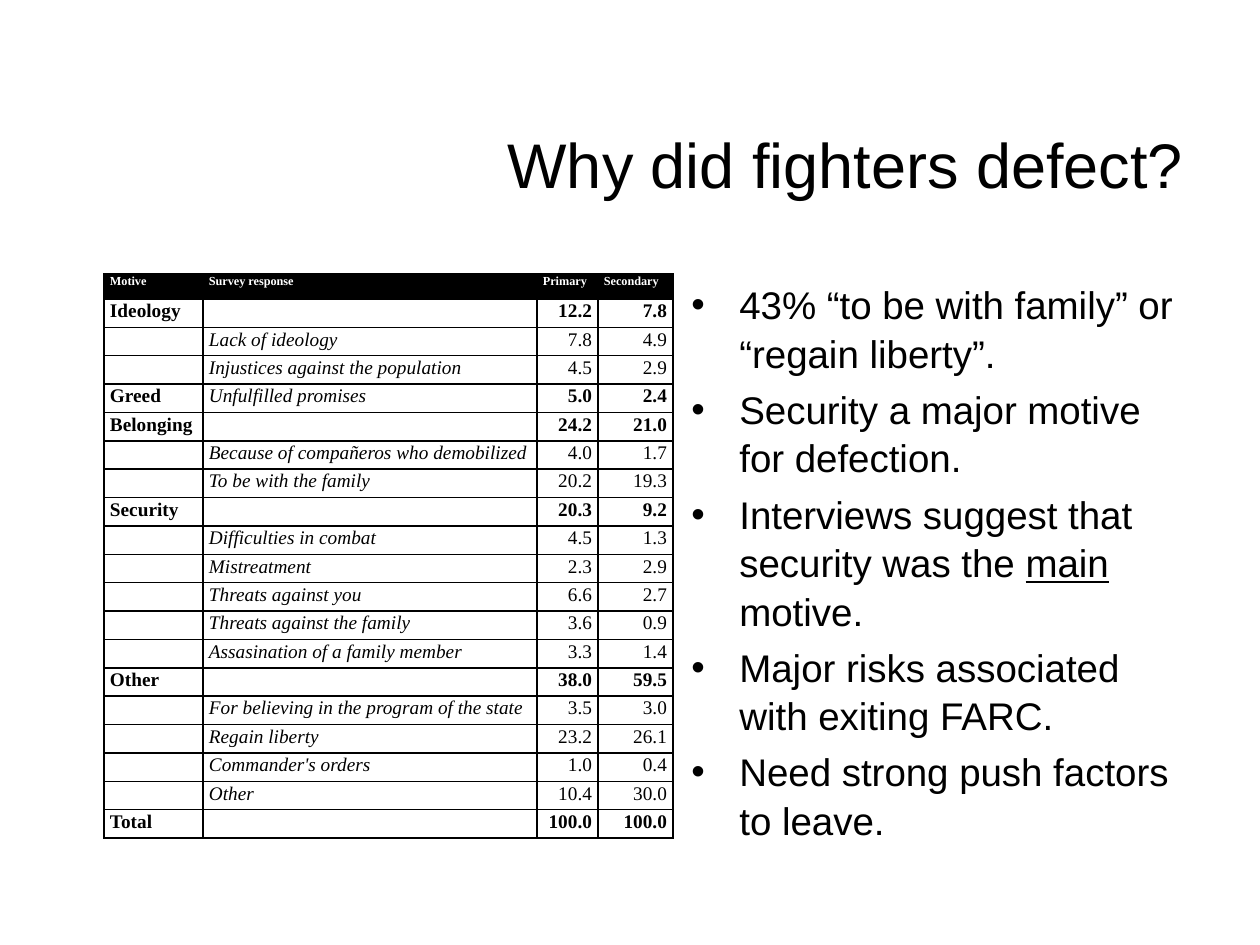
import lxml.etree
import pptx
import pptx.dml.color
import pptx.enum.text
import pptx.oxml.ns
import pptx.util

PIXELS_PER_INCH = 126
BLACK, WHITE = "000000", "FFFFFF"
ALIGN = pptx.enum.text.PP_ALIGN
ANCHOR = pptx.enum.text.MSO_ANCHOR

HEADINGS = ("Motive", "Survey response", "Primary", "Secondary")
MOTIVES = [
    ("Ideology", "", "12.2", "7.8"),
    ("", "Lack of ideology", "7.8", "4.9"),
    ("", "Injustices against the population", "4.5", "2.9"),
    ("Greed", "Unfulfilled promises", "5.0", "2.4"),
    ("Belonging", "", "24.2", "21.0"),
    ("", "Because of compañeros who demobilized", "4.0", "1.7"),
    ("", "To be with the family", "20.2", "19.3"),
    ("Security", "", "20.3", "9.2"),
    ("", "Difficulties in combat", "4.5", "1.3"),
    ("", "Mistreatment", "2.3", "2.9"),
    ("", "Threats against you", "6.6", "2.7"),
    ("", "Threats against the family", "3.6", "0.9"),
    ("", "Assasination of a family member", "3.3", "1.4"),
    ("Other", "", "38.0", "59.5"),
    ("", "For believing in the program of the state", "3.5", "3.0"),
    ("", "Regain liberty", "23.2", "26.1"),
    ("", "Commander's orders", "1.0", "0.4"),
    ("", "Other", "10.4", "30.0"),
    ("Total", "", "100.0", "100.0"),
]
# Each bullet is a list of (text, underlined) pieces.
FINDINGS = [
    [("43% “to be with family” or “regain liberty”.", False)],
    [("Security a major motive for defection.", False)],
    [("Interviews suggest that security was the ", False), ("main", True), (" motive.", False)],
    [("Major risks associated with exiting FARC.", False)],
    [("Need strong push factors to leave.", False)],
]


def px(length):
    return pptx.util.Emu(round(length * 914400 / PIXELS_PER_INCH))


def color(value):
    return pptx.dml.color.RGBColor.from_string(value)


def add_element(parent, tag, **attributes):
    return lxml.etree.SubElement(parent, pptx.oxml.ns.qn(tag), attributes)


class SlideBuilder:
    heading_font = "Arial"
    table_font = "Times New Roman"
    title_size, bullet_size, header_size, cell_size = 36, 22, 7, 11

    def __init__(self, presentation):
        title_only = presentation.slide_layouts[5]
        self.slide = presentation.slides.add_slide(title_only)

    def format_run(self, run, name, size, text_color=BLACK, bold=False, italic=False):
        font = run.font
        font.name, font.size = name, pptx.util.Pt(size)
        font.bold, font.italic = bold, italic
        font.color.rgb = color(text_color)

    def title(self, text, left, top, width, height):
        shape = self.slide.shapes.title
        shape.left, shape.top, shape.width, shape.height = map(px, (left, top, width, height))
        frame = shape.text_frame
        frame.text = text
        frame.vertical_anchor = ANCHOR.MIDDLE
        paragraph = frame.paragraphs[0]
        paragraph.alignment = ALIGN.RIGHT
        self.format_run(paragraph.runs[0], self.heading_font, self.title_size)

    def bullets(self, items, left, top, width, height, indent):
        shape = self.slide.shapes.add_textbox(*map(px, (left, top, width, height)))
        frame = shape.text_frame
        frame.word_wrap = True
        for index, pieces in enumerate(items):
            paragraph = frame.add_paragraph() if index else frame.paragraphs[0]
            properties = paragraph._p.get_or_add_pPr()
            properties.set("marL", str(px(indent)))
            properties.set("indent", str(px(-indent)))
            add_element(properties, "a:buFont", typeface=self.heading_font)
            add_element(properties, "a:buChar", char="•")
            paragraph.line_spacing = 1.05
            paragraph.space_before = pptx.util.Pt(0.2 * self.bullet_size if index else 0)
            for text, underlined in pieces:
                run = paragraph.add_run()
                run.text = text
                self.format_run(run, self.heading_font, self.bullet_size)
                run.font.underline = underlined

    def border(self, cell):
        properties = cell._tc.get_or_add_tcPr()
        for position, side in enumerate(("a:lnL", "a:lnR", "a:lnT", "a:lnB")):
            line = add_element(properties, side, w=str(pptx.util.Pt(1)))
            fill = add_element(line, "a:solidFill")
            add_element(fill, "a:srgbClr", val=BLACK)
            properties.insert(position, line)

    def cell(self, cell, text, size, text_color=BLACK, bold=False, italic=False,
             alignment=ALIGN.LEFT, fill=None):
        cell.margin_left = cell.margin_right = px(6)
        cell.margin_top = cell.margin_bottom = 0
        if fill:
            cell.fill.solid()
            cell.fill.fore_color.rgb = color(fill)
        else:
            cell.fill.background()
        self.border(cell)
        paragraph = cell.text_frame.paragraphs[0]
        paragraph.alignment = alignment
        paragraph.line_spacing = 1.07
        if text:
            paragraph.text = text
            self.format_run(paragraph.runs[0], self.table_font, size, text_color, bold, italic)
        else:
            # Keeps the empty row from growing to the default text size.
            add_element(paragraph._p, "a:endParaRPr", sz=str(size * 100))

    def table(self, headings, rows, left, top, widths, header_height, height):
        shape = self.slide.shapes.add_table(
            len(rows) + 1, len(headings), *map(px, (left, top, sum(widths), height)))
        table = shape.table
        table.first_row = table.horz_banding = False
        for column, width in zip(table.columns, widths):
            column.width = px(width)
        for row in table.rows:
            row.height = px((height - header_height) / len(rows))
        table.rows[0].height = px(header_height)

        for column, text in enumerate(headings):
            self.cell(table.cell(0, column), text, self.header_size, WHITE, bold=True, fill=BLACK)
        for row, values in enumerate(rows, start=1):
            is_motive = bool(values[0])
            for column, text in enumerate(values):
                is_response = column == 1
                self.cell(table.cell(row, column), text, self.cell_size,
                          bold=is_motive and not is_response, italic=is_response,
                          alignment=ALIGN.RIGHT if column > 1 else ALIGN.LEFT)


def main():
    presentation = pptx.Presentation()
    presentation.slide_width, presentation.slide_height = px(1260), px(945)
    builder = SlideBuilder(presentation)
    builder.title("Why did fighters defect?", 243, 84, 953, 158)
    builder.table(HEADINGS, MOTIVES, 104, 274, (99, 334, 61, 75), 25, 565)
    builder.bullets(FINDINGS, 679, 273, 515, 567, indent=48)
    presentation.save("out.pptx")


if __name__ == "__main__":
    main()
